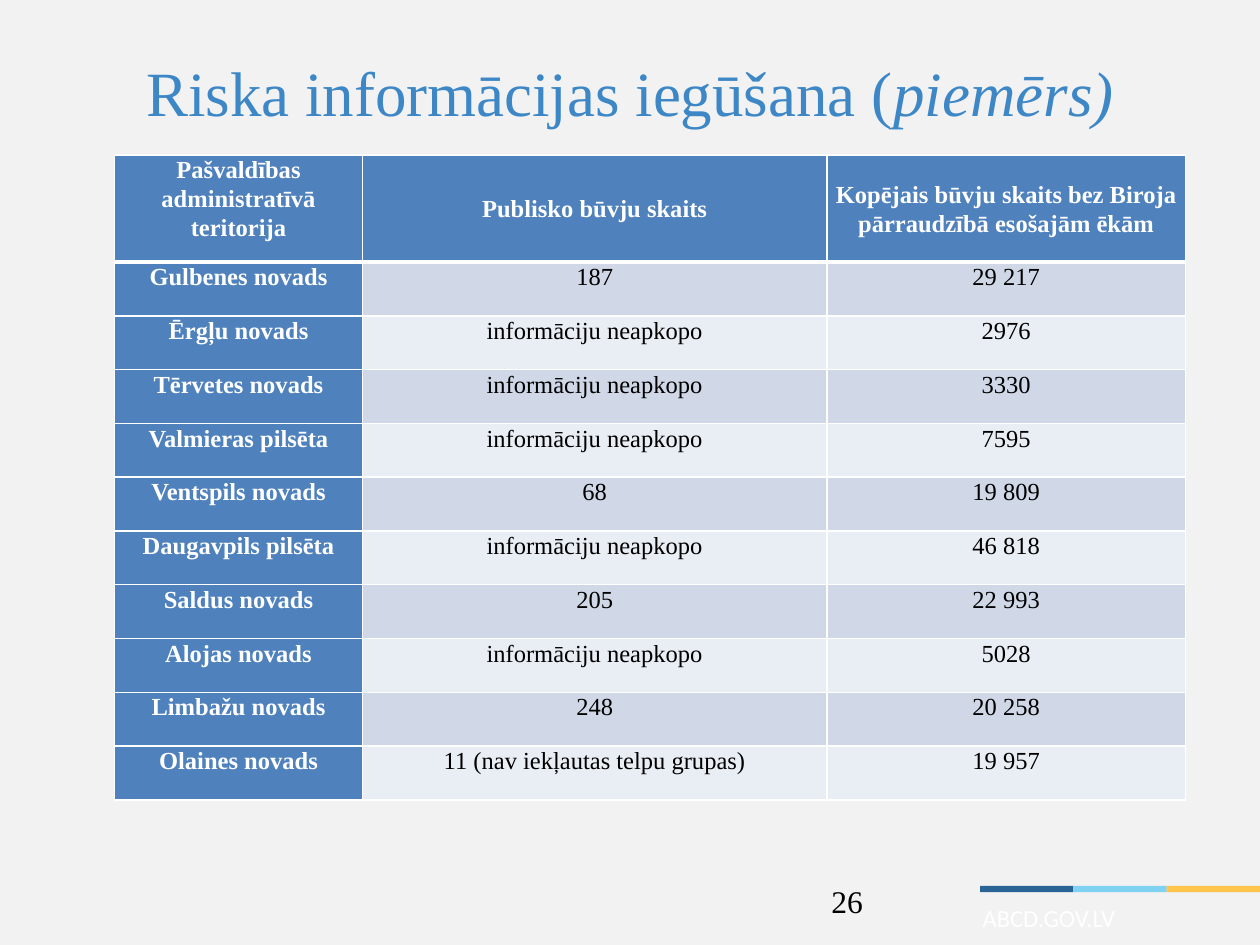
from dataclasses import dataclass

from lxml import etree
from pptx import Presentation
from pptx.dml.color import RGBColor
from pptx.enum.shapes import MSO_SHAPE as Shape
from pptx.enum.text import MSO_ANCHOR as Anchor, PP_ALIGN as Align
from pptx.oxml.ns import qn
from pptx.util import Inches, Pt


@dataclass(frozen=True)
class Theme:
    background: str = "F2F2F2"
    title: str = "3D87C7"
    text: str = "000000"
    white: str = "FFFFFF"
    header: str = "4F81BD"
    bands: tuple = ("D0D8E8", "E9EDF4")
    stripes: tuple = ("2A6496", "7FD2F1", "FFC54B")
    font: str = "Times New Roman"
    footer_font: str = "Calibri"
    title_size: int = 36
    table_size: int = 14
    number_size: int = 18
    footer_size: int = 14


THEME = Theme()

COLUMN_WIDTHS = (1.97, 3.69, 2.85)
HEADER_HEIGHT = 0.85
HEADERS = (
    "Pašvaldības administratīvā teritorija",
    "Publisko būvju skaits",
    "Kopējais būvju skaits bez Biroja pārraudzībā esošajām ēkām",
)
NOT_COLLECTED = "informāciju neapkopo"
MUNICIPALITIES = (
    ("Gulbenes novads", "187", "29 217"),
    ("Ērgļu novads", NOT_COLLECTED, "2976"),
    ("Tērvetes novads", NOT_COLLECTED, "3330"),
    ("Valmieras pilsēta", NOT_COLLECTED, "7595"),
    ("Ventspils novads", "68", "19 809"),
    ("Daugavpils pilsēta", NOT_COLLECTED, "46 818"),
    ("Saldus novads", "205", "22 993"),
    ("Alojas novads", NOT_COLLECTED, "5028"),
    ("Limbažu novads", "248", "20 258"),
    ("Olaines novads", "11 (nav iekļautas telpu grupas)", "19 957"),
)


def rgb(color):
    return RGBColor.from_string(color)


def add_text(paragraph, text, size, color=THEME.text, font=THEME.font,
             bold=False, italic=False, align=Align.LEFT):
    paragraph.alignment = align
    run = paragraph.add_run()
    run.text = text
    run.font.name = font
    run.font.size = Pt(size)
    run.font.bold = bold
    run.font.italic = italic
    run.font.color.rgb = rgb(color)


def add_text_box(slide, left, top, width, height, anchor=Anchor.TOP):
    box = slide.shapes.add_textbox(Inches(left), Inches(top), Inches(width), Inches(height))
    box.text_frame.word_wrap = True
    box.text_frame.vertical_anchor = anchor
    return box.text_frame.paragraphs[0]


def set_borders(cell, bottom_width=1):
    properties = cell._tc.get_or_add_tcPr()
    widths = {"a:lnL": 1, "a:lnR": 1, "a:lnT": 1, "a:lnB": bottom_width}
    for index, (tag, width) in enumerate(widths.items()):
        line = etree.Element(qn(tag), w=str(Pt(width)))
        fill = etree.SubElement(line, qn("a:solidFill"))
        etree.SubElement(fill, qn("a:srgbClr"), val=THEME.white)
        properties.insert(index, line)


def fill_cell(cell, text, fill, color, bold, anchor=Anchor.TOP, bottom_width=1):
    cell.margin_left = cell.margin_right = Inches(0.07)
    cell.margin_top = cell.margin_bottom = 0
    cell.vertical_anchor = anchor
    cell.fill.solid()
    cell.fill.fore_color.rgb = rgb(fill)
    set_borders(cell, bottom_width)
    paragraph = cell.text_frame.paragraphs[0]
    paragraph.line_spacing = 1.07
    paragraph.space_after = Pt(8)
    add_text(paragraph, text, THEME.table_size, color, bold=bold, align=Align.CENTER)


def add_title(slide, left, top, width, height):
    paragraph = add_text_box(slide, left, top, width, height, Anchor.MIDDLE)
    for text, italic in (("Riska informācijas iegūšana (", False), ("piemērs)", True)):
        add_text(paragraph, text, THEME.title_size, THEME.title,
                 italic=italic, align=Align.CENTER)


def add_municipality_table(slide, left, top, width, height):
    frame = slide.shapes.add_table(len(MUNICIPALITIES) + 1, len(HEADERS), Inches(left),
                                   Inches(top), Inches(width), Inches(height))
    table = frame.table
    for column, share in zip(table.columns, COLUMN_WIDTHS):
        column.width = Inches(width * share / sum(COLUMN_WIDTHS))
    row_height = (height - HEADER_HEIGHT) / len(MUNICIPALITIES)
    for index, row in enumerate(table.rows):
        row.height = Inches(row_height if index else HEADER_HEIGHT)

    # Header row
    for column, text in enumerate(HEADERS):
        fill_cell(table.cell(0, column), text, THEME.header, THEME.white, True,
                  Anchor.MIDDLE if column else Anchor.TOP, bottom_width=3)

    # Municipality rows: coloured first column, banded values
    for row, values in enumerate(MUNICIPALITIES, start=1):
        band = THEME.bands[(row - 1) % 2]
        for column, text in enumerate(values):
            fill, color = (band, THEME.text) if column else (THEME.header, THEME.white)
            fill_cell(table.cell(row, column), text, fill, color, bold=column == 0)


def add_footer(slide, left, top, width, height):
    # Three-colour stripe
    stripe_width = width / len(THEME.stripes)
    for index, color in enumerate(THEME.stripes):
        stripe = slide.shapes.add_shape(
            Shape.RECTANGLE, Inches(left + index * stripe_width), Inches(top),
            Inches(stripe_width), Inches(0.05))
        stripe.shadow.inherit = False
        stripe.fill.solid()
        stripe.fill.fore_color.rgb = rgb(color)
        stripe.line.fill.background()

    # Web address
    paragraph = add_text_box(slide, left - 0.08, top + 0.08, width, height - 0.08, Anchor.MIDDLE)
    add_text(paragraph, "ABCD.GOV.LV", THEME.footer_size, THEME.white, THEME.footer_font)


def add_page_number(slide, left, top, width, height):
    paragraph = add_text_box(slide, left, top, width, height)
    add_text(paragraph, "26", THEME.number_size)


def main():
    presentation = Presentation()
    presentation.slide_width = Inches(10)
    presentation.slide_height = Inches(7.5)
    slide = presentation.slides.add_slide(presentation.slide_layouts[6])
    slide.background.fill.solid()
    slide.background.fill.fore_color.rgb = rgb(THEME.background)

    add_footer(slide, 7.78, 7.03, 2.22, 0.42)
    add_title(slide, 0.5, 0.3, 9, 0.85)
    add_page_number(slide, 6.5, 6.95, 0.71, 0.4)
    add_municipality_table(slide, 0.91, 1.23, 8.5, 5.12)
    presentation.save("out.pptx")


if __name__ == "__main__":
    main()
